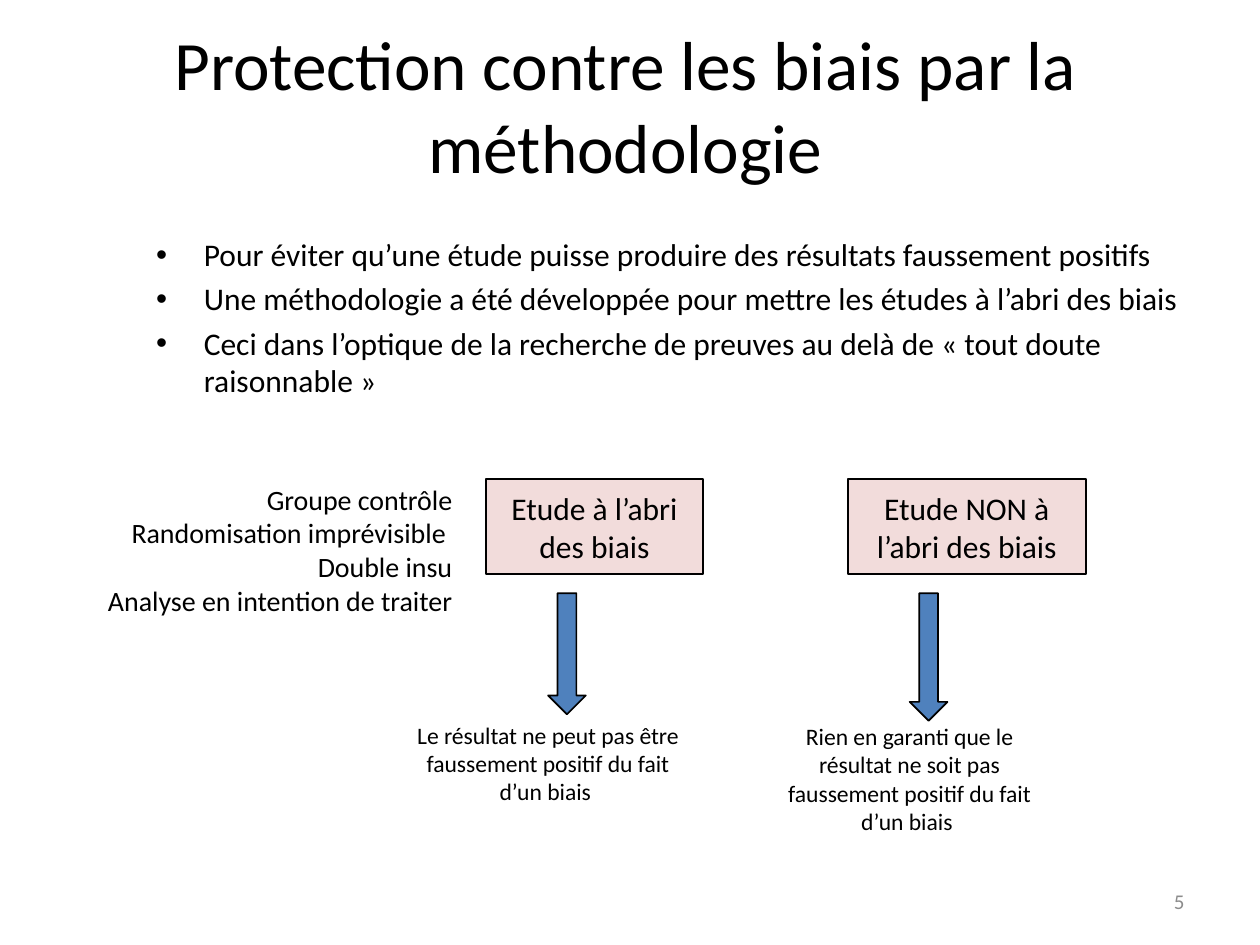
from lxml import etree
from pptx import Presentation
from pptx import util as u
from pptx.dml.color import RGBColor
from pptx.enum import shapes, text
from pptx.oxml.ns import qn

LEFT, CENTER, RIGHT = text.PP_ALIGN.LEFT, text.PP_ALIGN.CENTER, text.PP_ALIGN.RIGHT
TOP, MIDDLE = text.MSO_ANCHOR.TOP, text.MSO_ANCHOR.MIDDLE


def paint(color_format, color):
    color_format.rgb = RGBColor.from_string(color)


def write(shape, lines, size, align=CENTER, anchor=TOP, color="000000", wrap=True):
    frame = shape.text_frame
    frame.word_wrap = wrap
    frame.vertical_anchor = anchor
    frame.text = "\n".join(lines)
    for paragraph in frame.paragraphs:
        paragraph.alignment = align
        paragraph.font.name = "Calibri"
        paragraph.font.size = u.Pt(size)
        paint(paragraph.font.color, color)
    return frame


presentation = Presentation()
presentation.slide_width, presentation.slide_height = u.Cm(25.4), u.Cm(19.05)
slide = presentation.slides.add_slide(presentation.slide_layouts[6])

title = slide.shapes.add_textbox(u.Cm(0.91), u.Cm(0.71), u.Cm(23.4), u.Cm(2.77))
write(title, ["Protection contre les biais par la méthodologie"], 39.6, anchor=MIDDLE)

bullets = slide.shapes.add_textbox(u.Cm(2.9), u.Cm(4.62), u.Cm(21.4), u.Cm(5.18))
frame = write(bullets, [
    "Pour éviter qu’une étude puisse produire des résultats faussement positifs",
    "Une méthodologie a été développée pour mettre les études à l’abri des biais",
    "Ceci dans l’optique de la recherche de preuves au delà de « tout doute raisonnable »",
], 18, LEFT)
for paragraph in frame.paragraphs:
    paragraph.space_before = u.Pt(3.6)
    properties = paragraph._p.get_or_add_pPr()
    properties.set("marL", str(u.Cm(0.96)))
    properties.set("indent", str(-u.Cm(0.96)))
    bullet_font = etree.Element(qn("a:buFont"), typeface="Arial")
    bullet = etree.Element(qn("a:buChar"), char="•")
    properties.find(qn("a:spcBef")).addnext(bullet_font)
    bullet_font.addnext(bullet)

methods = slide.shapes.add_textbox(u.Cm(1.83), u.Cm(9.6), u.Cm(7.54), u.Cm(3))
write(methods, [
    "Groupe contrôle",
    "Randomisation imprévisible ",
    "Double insu",
    "Analyse en intention de traiter",
], 16, RIGHT, wrap=False)

studies = [
    ("Etude à l’abri des biais", 9.8, 4.37, 11.05, 2.44,
     "Le résultat ne peut pas être faussement positif du fait d’un biais ", 7.92, 14.4, 1.98),
    ("Etude NON à l’abri des biais", 17.09, 4.8, 18.34, 2.57,
     "Rien en garanti que le résultat ne soit pas faussement positif du fait d’un biais ",
     15.21, 14.43, 2.57),
]
for (study, box_left, box_width, arrow_left, arrow_height,
     result, result_left, result_top, result_height) in studies:
    box = slide.shapes.add_shape(
        shapes.MSO_SHAPE.RECTANGLE, u.Cm(box_left), u.Cm(9.65), u.Cm(box_width), u.Cm(1.93))
    arrow = slide.shapes.add_shape(
        shapes.MSO_SHAPE.DOWN_ARROW, u.Cm(arrow_left), u.Cm(11.96), u.Cm(0.76), u.Cm(arrow_height))
    for shape, fill in ((box, "F2DCDB"), (arrow, "4F81BD")):
        shape.shadow.inherit = False
        shape.fill.solid()
        paint(shape.fill.fore_color, fill)
        paint(shape.line.color, "000000")
        shape.line.width = u.Pt(1)
    frame = write(box, [study], 18, anchor=MIDDLE)
    frame.margin_left = frame.margin_right = u.Cm(0.18)
    frame.margin_top = frame.margin_bottom = u.Cm(0.1)
    outcome = slide.shapes.add_textbox(
        u.Cm(result_left), u.Cm(result_top), u.Cm(6.25), u.Cm(result_height))
    write(outcome, [result], 13.5)

number = slide.shapes.add_textbox(u.Cm(18.21), u.Cm(17.65), u.Cm(5.92), u.Cm(1.02))
write(number, ["5"], 12, RIGHT, MIDDLE, "8C8C8C")

presentation.save("out.pptx")
